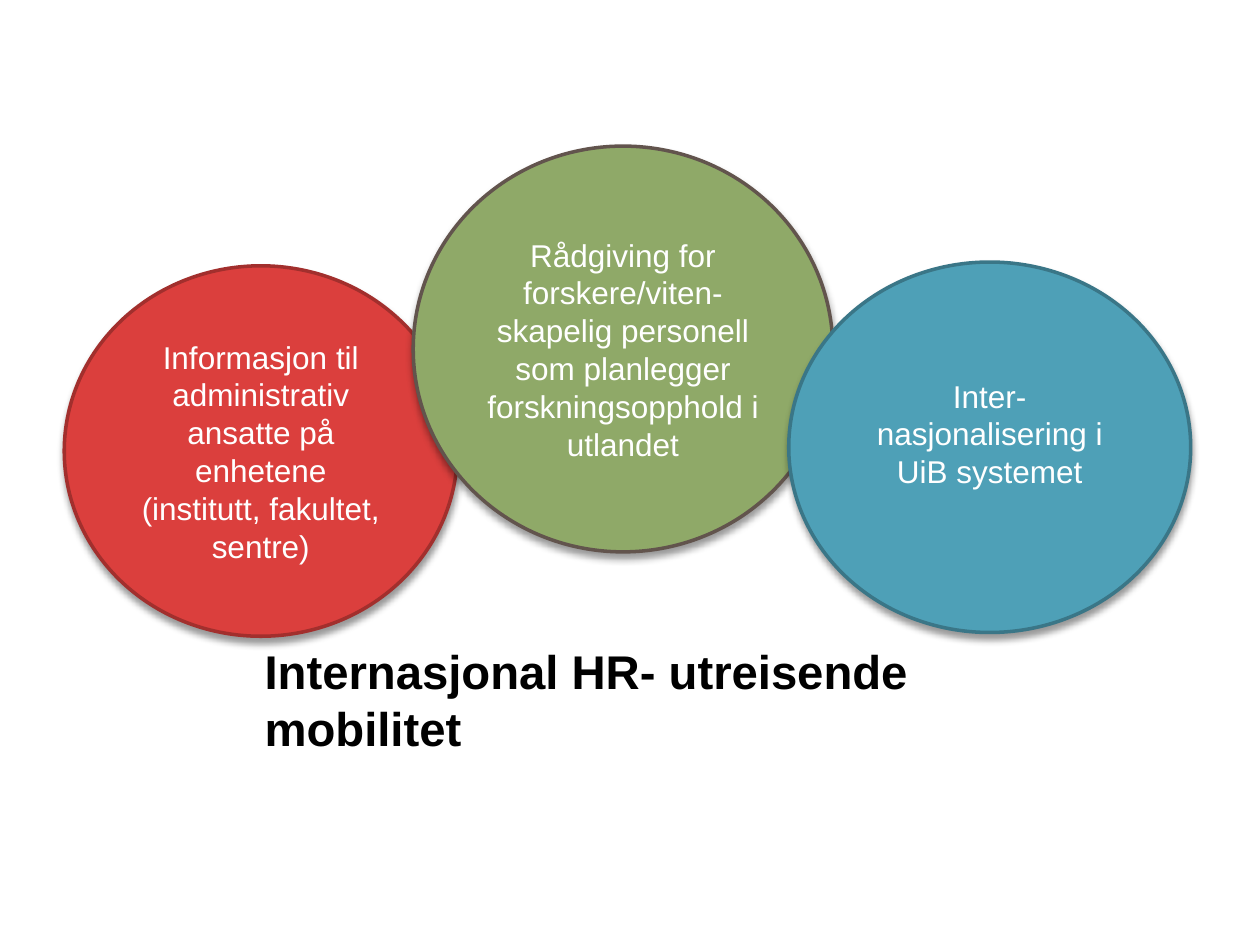
from lxml.etree import SubElement
from pptx import Presentation
from pptx.dml.color import RGBColor
from pptx.enum.shapes import MSO_SHAPE
from pptx.enum.text import MSO_ANCHOR, PP_ALIGN
from pptx.oxml.ns import qn
from pptx.util import Inches, Pt

THEME = {
    "font": "Arial",
    "title": {"size": Pt(27), "bold": True, "color": "000000"},
    "label": {"size": Pt(18), "bold": False, "color": "FFFFFF"},
    "outline": Pt(2),
    "shadow": {"color": "000000", "alpha": 40, "blur": Pt(4), "distance": Pt(3), "angle": 90},
}

TITLE = {"text": "Internasjonal HR- utreisende mobilitet", "at": (2, 5.05, 6.27, 1.01)}
CIRCLES = [
    {"text": "Informasjon til administrativ ansatte på enhetene (institutt, fakultet, sentre)",
     "at": (0.51, 2.11, 3.12, 2.94), "fill": "DB3F3D", "line": "A22F2D", "bottom": 0.05},
    {"text": "Rådgiving for forskere/viten-skapelig personell som planlegger "
             "forskningsopphold i utlandet",
     "at": (3.28, 1.16, 3.33, 3.22), "fill": "8FA968", "line": "62544D", "bottom": 0.05},
    {"text": "Inter-nasjonalisering i UiB systemet",
     "at": (6.26, 2.08, 3.19, 2.94), "fill": "4EA0B7", "line": "3A7687", "bottom": 0.27},
]


def write(shape, text, style, align, anchor):
    frame = shape.text_frame
    frame.word_wrap = True
    frame.vertical_anchor = anchor
    para = frame.paragraphs[0]
    para.alignment = align
    span = para.add_run()
    span.text = text
    span.font.name = THEME["font"]
    span.font.color.rgb = RGBColor.from_string(style["color"])
    for name in ("size", "bold"):
        setattr(span.font, name, style[name])


def add_shadow(shape):
    style = THEME["shadow"]
    shape.shadow.inherit = False
    effects = shape._element.spPr.find(qn("a:effectLst"))
    outer = SubElement(effects, qn("a:outerShdw"), blurRad=str(style["blur"]),
                       dist=str(style["distance"]), dir=str(style["angle"] * 60000),
                       rotWithShape="0")
    color = SubElement(outer, qn("a:srgbClr"), val=style["color"])
    SubElement(color, qn("a:alpha"), val=str(style["alpha"] * 1000))


def add_circle(page, circle):
    shape = page.shapes.add_shape(MSO_SHAPE.OVAL, *map(Inches, circle["at"]))
    shape.fill.solid()
    shape.fill.fore_color.rgb = RGBColor.from_string(circle["fill"])
    shape.line.color.rgb = RGBColor.from_string(circle["line"])
    shape.line.width = THEME["outline"]
    add_shadow(shape)
    write(shape, circle["text"], THEME["label"], PP_ALIGN.CENTER, MSO_ANCHOR.MIDDLE)
    shape.text_frame.margin_bottom = Inches(circle["bottom"])


def main():
    deck = Presentation()
    deck.slide_width, deck.slide_height = Inches(10), Inches(7.5)
    page = deck.slides.add_slide(deck.slide_layouts[5])
    for circle in CIRCLES:
        add_circle(page, circle)
    title = page.shapes.title
    for name, value in zip(("left", "top", "width", "height"), TITLE["at"]):
        setattr(title, name, Inches(value))
    write(title, TITLE["text"], THEME["title"], PP_ALIGN.LEFT, MSO_ANCHOR.TOP)
    deck.save("out.pptx")


if __name__ == "__main__":
    main()
